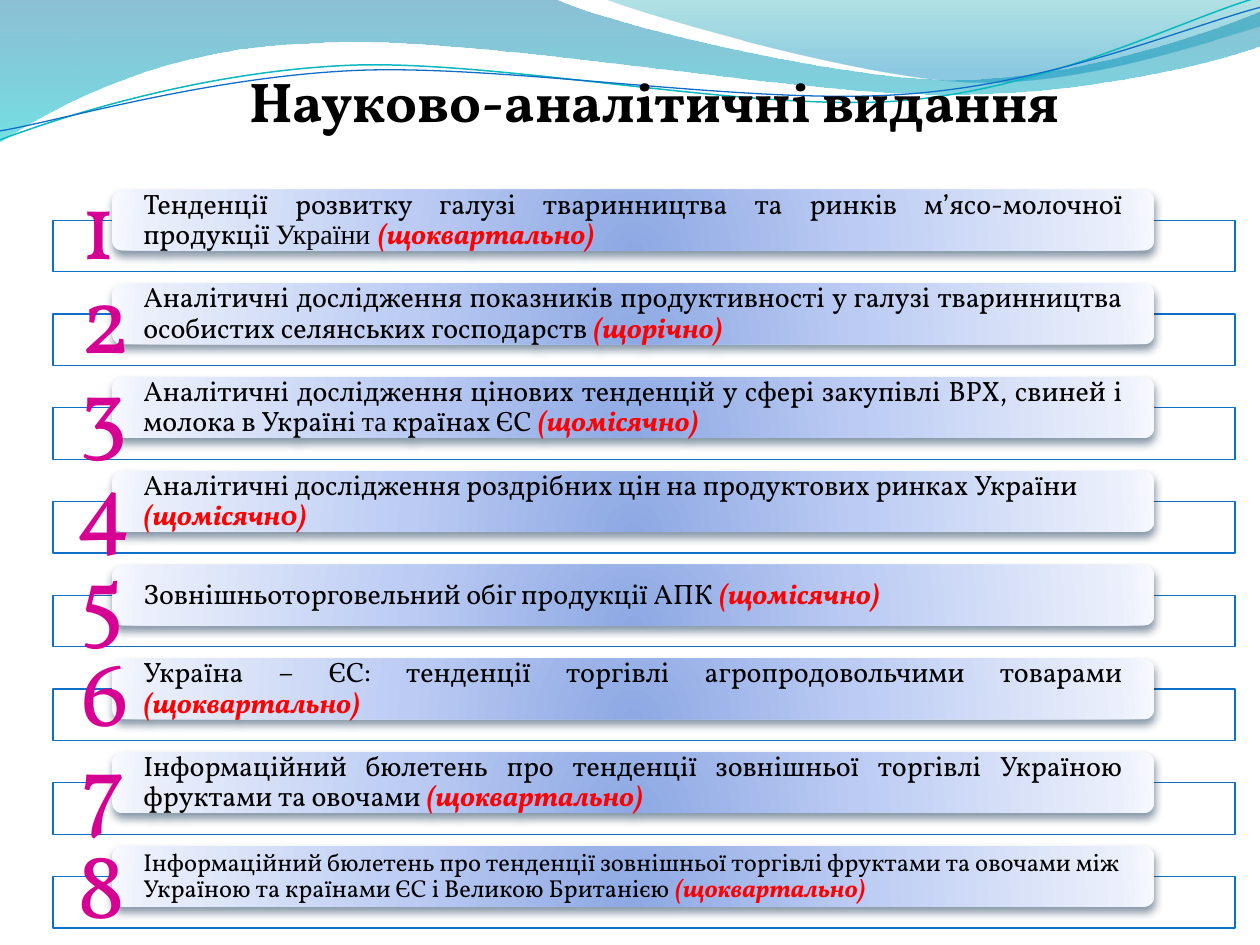
from pptx import Presentation
from pptx.dml.color import RGBColor
from pptx.enum.shapes import MSO_SHAPE
from pptx.enum.text import MSO_ANCHOR, PP_ALIGN
from pptx.oxml.ns import qn
from pptx.util import Cm, Pt
from lxml import etree

RECT, ROUND = MSO_SHAPE.RECTANGLE, MSO_SHAPE.ROUNDED_RECTANGLE
LEFT, CENTER, JUST = PP_ALIGN.LEFT, PP_ALIGN.CENTER, PP_ALIGN.JUSTIFY
TOP, MIDDLE = MSO_ANCHOR.TOP, MSO_ANCHOR.MIDDLE

THEME = {
    "font": "Vollkorn", "plain": "Times New Roman",
    "ink": "000000", "accent": "FF0000", "digit": "D60093",
    "white": "FFFFFF", "blue": "0F6FC6", "teal": "0AB8BF", "shade": "042747",
    "title_size": 32, "item_size": 16, "small_size": 14, "digit_size": 54,
    # stops: position %, colour, opacity %
    "card": [(0, "8DA8E3", 100), (43, "BBCBF3", 100),
             (93, "EAEFFB", 100), (100, "F7F9FF", 100)],
    "wide": [(0, "0074A1", 45), (100, "00C6CF", 55)],
    "short": [(0, "00A1A9", 30), (80, "008BBF", 45)],
}

TITLE = "Науково-аналітичні видання"
# text parts (a tuple names another font), period, alignment, size
ITEMS = [
    (["Тенденції розвитку галузі тваринництва та ринків м’ясо-молочної продукції ",
      ("України ", "plain")], "(щоквартально)", JUST, "item_size"),
    (["Аналітичні дослідження показників продуктивності у галузі тваринництва "
      "особистих селянських господарств "], "(щорічно)", JUST, "item_size"),
    (["Аналітичні дослідження цінових тенденцій у сфері закупівлі ВРХ, свиней і "
      "молока в Україні ", ("та", "plain"), " країнах ЄС "],
     "(щомісячно)", JUST, "item_size"),
    (["Аналітичні дослідження роздрібних цін на продуктових ринках України "],
     "(щомісячн0)", LEFT, "item_size"),
    (["Зовнішньоторговельний обіг продукції АПК "],
     "(щомісячно)", LEFT, "item_size"),
    (["Україна – ЄС: тенденції торгівлі агропродовольчими товарами "],
     "(щоквартально)", JUST, "item_size"),
    (["Інформаційний бюлетень про тенденції зовнішньої торгівлі Україною "
      "фруктами та овочами "], "(щоквартально)", JUST, "item_size"),
    (["Інформаційний бюлетень про тенденції зовнішньої торгівлі фруктами та "
      "овочами між Україною та країнами ЄС і Великою Британією "],
     "(щоквартально)", LEFT, "small_size"),
]
# left and top of each digit, set by eye
SPOTS = [(1.37, 3.2), (1.37, 5.1), (1.35, 6.96), (1.27, 8.86),
         (1.35, 10.74), (1.4, 12.62), (1.37, 14.55), (1.32, 16.48)]

# one point is a straight step, three points a Bezier curve
WIDE = [[(0, 0)], [(11.18, -0.03)],
        [(12.09, 0.43), (16.87, 1.6), (19.25, 1.6)],
        [(21.67, 1.6), (24.33, 0.66), (25.4, 0.23)], [(25.43, 0.91)],
        [(24.97, 1.12), (22.1, 1.93), (18.95, 1.9)],
        [(15.8, 1.9), (9.7, 0.71), (6.53, 0.86)],
        [(3.28, 0.91), (1.17, 2.11), (-0.03, 2.87)], [(0, 0)]]
SHORT = [[(12.17, -0.03)],
         [(12.93, 0.28), (17.32, 1.57), (19.53, 1.65)],
         [(21.74, 1.75), (24.41, 0.81), (25.4, 0.53)],
         [(25.4, 0)], [(12.17, -0.03)]]
TEAL = [[(-0.05, 2.22)],
        [(1.19, 1.82), (4.02, 1.04), (7.05, 1.05)],
        [(10.05, 1.07), (15.02, 2.37), (18.08, 2.29)],
        [(21.13, 2.2), (23.87, 0.91), (25.41, 0.55)]]
BLUE = [[(-0.04, 2.04)],
        [(1.16, 1.9), (4.18, 1.15), (7.2, 1.16)],
        [(10.25, 1.18), (15.13, 2.25), (18.19, 2.16)],
        [(21.21, 2.1), (23.98, 1.06), (25.45, 0.75)]]
TILT = 357.3

PITCH, CARD_TOP, STRIP_TOP = 1.89, 3.83, 4.44

prs = Presentation()
prs.slide_width, prs.slide_height = Cm(25.4), Cm(19.05)
slide = prs.slides.add_slide(prs.slide_layouts[6])
shapes = slide.shapes


def color(name):
    return RGBColor.from_string(THEME[name])


def add(parent, tag, **attrs):
    return etree.SubElement(parent, qn(tag), {k: str(v) for k, v in attrs.items()})


def tint(parent, code, alpha):
    node = add(parent, "a:srgbClr", val=code)
    if alpha < 100:
        add(node, "a:alpha", val=alpha * 1000)


def blend(shape, stops, radial=False):
    """Fill with a top-down gradient, or a radial one centred below the shape."""
    shape.fill.gradient()
    grad = shape._element.spPr.find(qn("a:gradFill"))
    for child in list(grad):
        grad.remove(child)
    group = add(grad, "a:gsLst")
    for pos, code, alpha in stops:
        tint(add(group, "a:gs", pos=pos * 1000), code, alpha)
    if radial:
        ring = add(grad, "a:path", path="circle")
        add(ring, "a:fillToRect", l=50000, t=130000, r=50000, b=-30000)
    else:
        add(grad, "a:lin", ang=5400000, scaled=0)


def outline(shape, name, width):
    shape.line.color.rgb = color(name)
    shape.line.width = Pt(width)


def wave(parts, close):
    """Build the control polygon, then turn its triples into Bezier curves."""
    points = [(Cm(x), Cm(y)) for part in parts for x, y in part]
    pen = shapes.build_freeform(*points[0], scale=1)
    pen.add_line_segments(points[1:], close=close)
    shape = pen.convert_to_shape()
    shape.shadow.inherit = False
    steps = iter(list(shape._element.iter(qn("a:lnTo"))))
    for part in parts[1:]:
        group = [next(steps) for _ in part]
        if len(group) == 3:
            curve = etree.Element(qn("a:cubicBezTo"))
            group[0].addprevious(curve)
            for step in group:
                curve.append(step[0])
                step.getparent().remove(step)
    return shape


def block(kind, *place):
    shape = shapes.add_shape(kind, *map(Cm, place))
    shape.shadow.inherit = False
    return shape


def write(shape, runs, align=LEFT, anchor=TOP, size="item_size", inset=None, space=None):
    """Write runs of (text, font, colour, bold, italic) as one paragraph."""
    frame = shape.text_frame
    frame.word_wrap = True
    frame.vertical_anchor = anchor
    if inset is not None:
        frame.margin_left = frame.margin_right = Cm(inset)
        frame.margin_top = frame.margin_bottom = 0
    para = frame.paragraphs[0]
    para.alignment = align
    para.line_spacing = space
    for text, face, ink, bold, italic in runs:
        run = para.add_run()
        run.text = text
        font = run.font
        font.name, font.size = THEME[face], Pt(THEME[size])
        font.color.rgb = color(ink)
        font.bold, font.italic = bold, italic


for parts, stops in ((WIDE, "wide"), (SHORT, "short")):
    shape = wave(parts, True)
    blend(shape, THEME[stops])
    shape.line.fill.background()
for parts, name, width in ((TEAL, "teal", 0.85), (BLUE, "blue", 0.75)):
    shape = wave(parts, False)
    shape.rotation = TILT
    shape.fill.background()
    outline(shape, name, width)

head = shapes.add_textbox(Cm(4.5), Cm(0.91), Cm(17.4), Cm(2.21))
write(head, [(TITLE, "font", "ink", True, False)], align=CENTER, anchor=MIDDLE,
      size="title_size")

for i, (parts, period, align, size) in enumerate(ITEMS):
    strip = block(RECT, 1.07, STRIP_TOP + i * PITCH, 23.83, 1.04)
    strip.fill.solid()
    strip.fill.fore_color.rgb = color("white")
    add(strip._element.spPr.find(qn("a:solidFill"))[0], "a:alpha", val=90000)
    outline(strip, "blue", 0.75)

    card = block(ROUND, 2.26, CARD_TOP + i * PITCH, 21.01, 1.22)
    blend(card, THEME["card"], radial=True)
    card.line.fill.background()
    glow = add(card._element.spPr.find(qn("a:effectLst")), "a:outerShdw",
               blurRad=Pt(4.5), dist=Pt(3), dir=5400000, rotWithShape=0)
    tint(glow, THEME["shade"], 48)
    pairs = [(p, "font") if isinstance(p, str) else p for p in parts]
    runs = [(text, face, "ink", False, False) for text, face in pairs]
    runs.append((period, "font", "accent", True, True))
    write(card, runs, align=align, anchor=MIDDLE, size=size, inset=0.57, space=0.9)

for i, (x, y) in enumerate(SPOTS, 1):
    digit = shapes.add_textbox(Cm(x), Cm(y), Cm(1.5), Cm(2.57))
    write(digit, [(str(i), "font", "digit", False, False)], size="digit_size")

prs.save("out.pptx")
